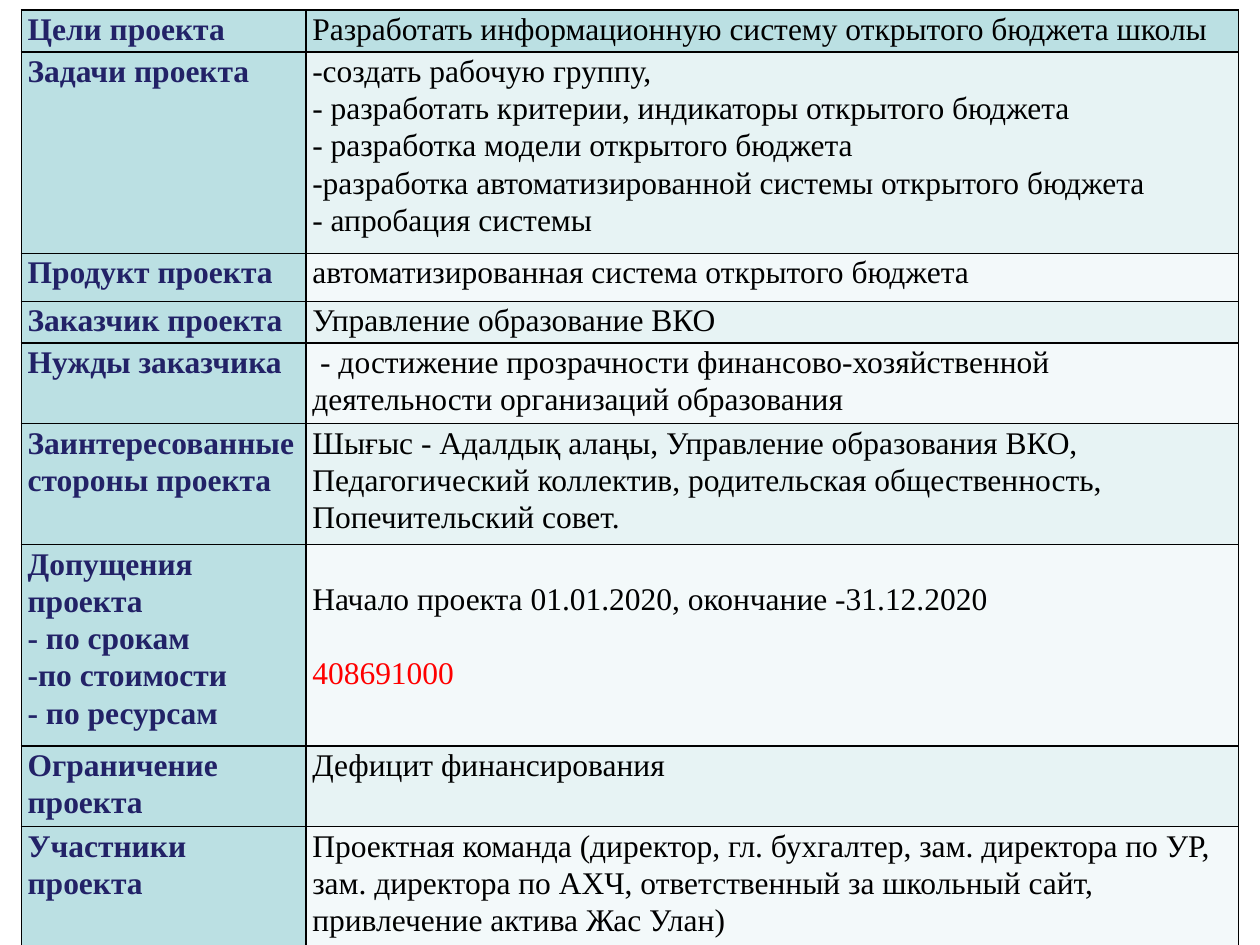
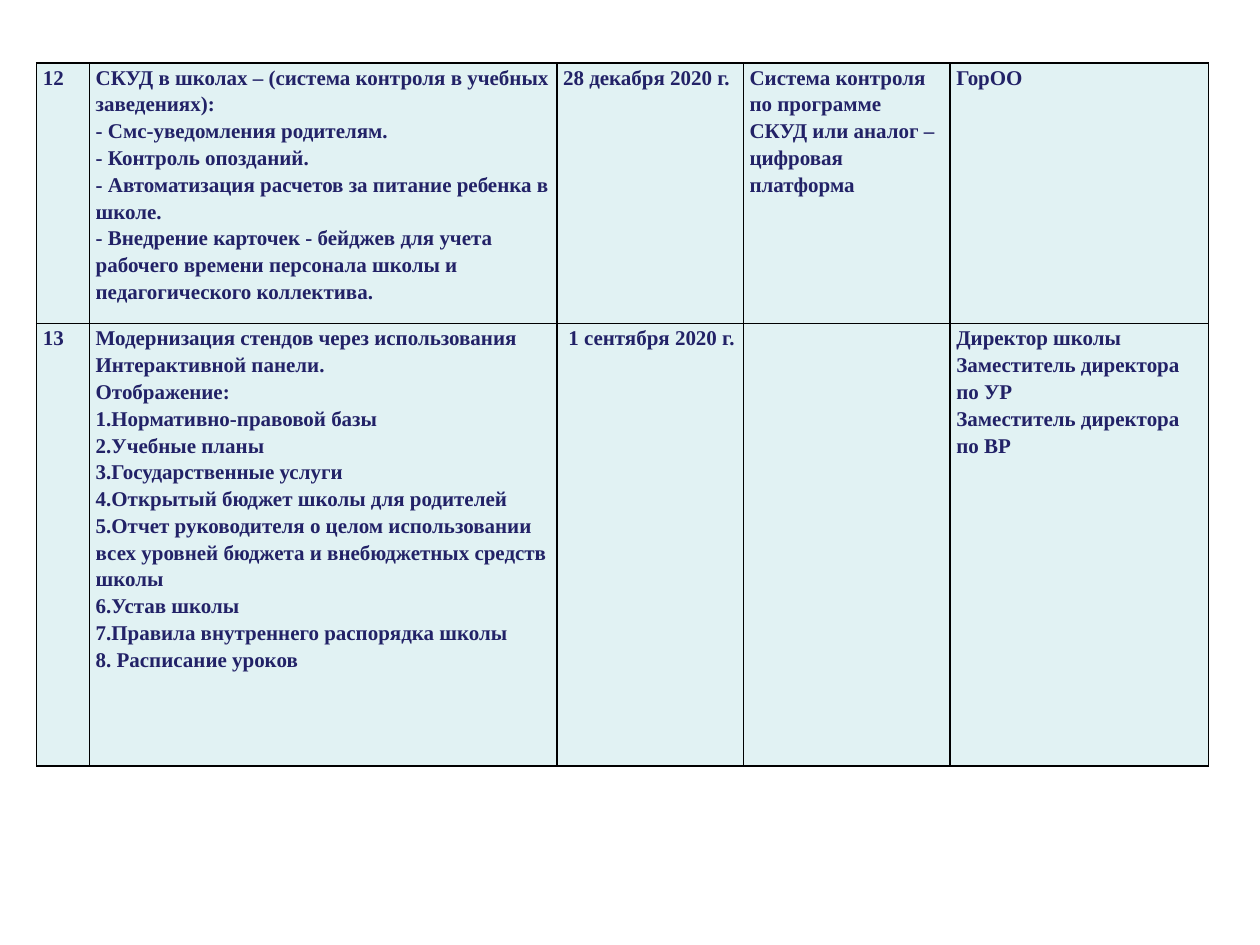
import dataclasses
import lxml.etree
import pptx
import pptx.dml.color
import pptx.oxml.ns
import pptx.util

Pt = pptx.util.Pt
qn = pptx.oxml.ns.qn

FONT = "Times New Roman"
COLORS = {
    "navy": "222267",
    "black": "000000",
    "red": "FF0000",
    "label": "BBE0E3",
    "band_dark": "E7F3F4",
    "band_light": "F3F9FA",
    "plan": "E1F2F3",
}


@dataclasses.dataclass
class Line:
    text: str
    marker: str = ""
    color: str = ""
    before: float = 0


def dashed(*texts):
    return [Line(text, marker="dash") for text in texts]


def numbered(*texts):
    return [Line(text, marker="number") for text in texts]


PASSPORT_WIDTHS = [162.7, 532.8]
PASSPORT = [
    (23.8, ["Цели проекта"],
     ["Разработать информационную систему открытого бюджета школы"]),
    (115.2, ["Задачи проекта"],
     dashed("создать рабочую группу,",
            " разработать критерии, индикаторы открытого бюджета",
            " разработка модели открытого бюджета",
            "разработка автоматизированной системы открытого бюджета",
            " апробация системы")),
    (27.4, ["Продукт проекта"], ["автоматизированная система открытого бюджета"]),
    (23.8, ["Заказчик проекта"], ["Управление образование ВКО"]),
    (46.1, ["Нужды заказчика"],
     [" - достижение прозрачности финансово-хозяйственной деятельности "
      "организаций образования"]),
    (69.1, ["Заинтересованные стороны проекта"],
     ["Шығыс - Адалдық алаңы, Управление образования ВКО, Педагогический "
      "коллектив, родительская общественность, Попечительский совет."]),
    (115.2, ["Допущения проекта", "- по срокам", "-по стоимости", "- по ресурсам"],
     ["Начало проекта 01.01.2020, окончание -31.12.2020",
      Line("408691000", color="red", before=21)]),
    (46.1, ["Ограничение проекта"], ["Дефицит финансирования"]),
    (69.1, ["Участники проекта"],
     ["Проектная команда (директор, гл. бухгалтер, зам. директора по УР, "
      "зам. директора по АХЧ, ответственный за школьный сайт, привлечение "
      "актива Жас Улан)"]),
]
DATES_ROW = 6
DATES_TOP = 20

PLAN_WIDTHS = [30.2, 267.1, 106.6, 118.1, 147.6]
PLAN_HEIGHTS = [149, 252.7]
PLAN = [
    [["12"],
     ["СКУД в школах – (система контроля в учебных заведениях):",
      "- Смс-уведомления родителям.",
      "- Контроль опозданий.",
      "- Автоматизация расчетов за питание ребенка в школе.",
      "- Внедрение карточек - бейджев для учета рабочего времени персонала "
      "школы и педагогического коллектива."],
     ["28 декабря 2020 г."],
     ["Система контроля по программе СКУД или аналог – цифровая платформа"],
     ["ГорОО"]],
    [["13"],
     ["Модернизация стендов через использования Интерактивной панели.",
      "Отображение:",
      *numbered("Нормативно-правовой базы",
                "Учебные планы",
                "Государственные услуги",
                "Открытый бюджет школы для родителей",
                "Отчет руководителя о целом использовании всех уровней "
                "бюджета и внебюджетных средств школы",
                "Устав школы",
                "Правила внутреннего распорядка школы",
                " Расписание уроков")],
     [" 1 сентября 2020 г."],
     [],
     ["Директор школы", "Заместитель директора по УР",
      "Заместитель директора по ВР"]],
]


def rgb(name):
    return pptx.dml.color.RGBColor.from_string(COLORS[name])


def add_marker(paragraph, marker):
    props = paragraph._p.get_or_add_pPr()
    props.set("marL", "0")
    if marker == "number":
        props.set("indent", str(-Pt(27)))
        lxml.etree.SubElement(props, qn("a:buFont"), typeface=FONT)
        lxml.etree.SubElement(props, qn("a:buAutoNum"), type="arabicPeriod")
    else:
        props.set("indent", "0")
        lxml.etree.SubElement(props, qn("a:buFont"), typeface=FONT)
        lxml.etree.SubElement(props, qn("a:buChar"), char="-")


def write_text(paragraph, text, *, size, color, bold, spacing, before=0, marker=""):
    paragraph.line_spacing = spacing
    paragraph.space_before = Pt(before)
    if marker:
        add_marker(paragraph, marker)
    run = paragraph.add_run()
    run.text = text
    run.font.name = FONT
    run.font.size = Pt(size)
    run.font.bold = bold
    run.font.color.rgb = rgb(color)


def draw_borders(cell):
    props = cell._tc.get_or_add_tcPr()
    for side in ("lnL", "lnR", "lnT", "lnB"):
        border = lxml.etree.SubElement(props, qn(f"a:{side}"), w=str(Pt(1)))
        fill = lxml.etree.SubElement(border, qn("a:solidFill"))
        lxml.etree.SubElement(fill, qn("a:srgbClr"), val=COLORS["black"])


def fill_cell(cell, lines, *, fill, color, top=0, **style):
    draw_borders(cell)
    cell.fill.solid()
    cell.fill.fore_color.rgb = rgb(fill)
    cell.margin_left = cell.margin_right = Pt(3.6)
    cell.margin_top, cell.margin_bottom = Pt(top), Pt(0)
    frame = cell.text_frame
    for index, line in enumerate(lines):
        if isinstance(line, str):
            line = Line(line)
        paragraph = frame.add_paragraph() if index else frame.paragraphs[0]
        write_text(paragraph, line.text, color=line.color or color,
                   before=line.before, marker=line.marker, **style)


def add_grid(slide, left, top, widths, heights):
    grid = slide.shapes.add_table(len(heights), len(widths), Pt(left), Pt(top),
                                  Pt(sum(widths)), Pt(sum(heights))).table
    grid.first_row = grid.horz_banding = False
    for column, width in zip(grid.columns, widths):
        column.width = Pt(width)
    for row, height in zip(grid.rows, heights):
        row.height = Pt(height)
    return grid


def add_passport(slide):
    heights = [height for height, _, _ in PASSPORT]
    passport = add_grid(slide, 12.2, 5.8, PASSPORT_WIDTHS, heights)
    style = {"size": 18, "spacing": 1.07}
    for row, (_, label, details) in enumerate(PASSPORT):
        band = "band_dark" if row % 2 else "band_light"
        fill_cell(passport.cell(row, 0), label, fill="label", color="navy",
                  bold=True, **style)
        fill_cell(passport.cell(row, 1), details, fill=band if row else "label",
                  color="black", bold=False,
                  top=DATES_TOP if row == DATES_ROW else 0, **style)


def add_plan(slide):
    plan = add_grid(slide, 20.9, 36, PLAN_WIDTHS, PLAN_HEIGHTS)
    for row, entries in enumerate(PLAN):
        for column, lines in enumerate(entries):
            fill_cell(plan.cell(row, column), lines, fill="plan", color="navy",
                      bold=True, size=12, spacing=1.15)


def main():
    deck = pptx.Presentation()
    deck.slide_width, deck.slide_height = Pt(720), Pt(540)
    blank = deck.slide_layouts[6]
    for add_content in (add_passport, add_plan):
        add_content(deck.slides.add_slide(blank))
    deck.save("out.pptx")


if __name__ == "__main__":
    main()
